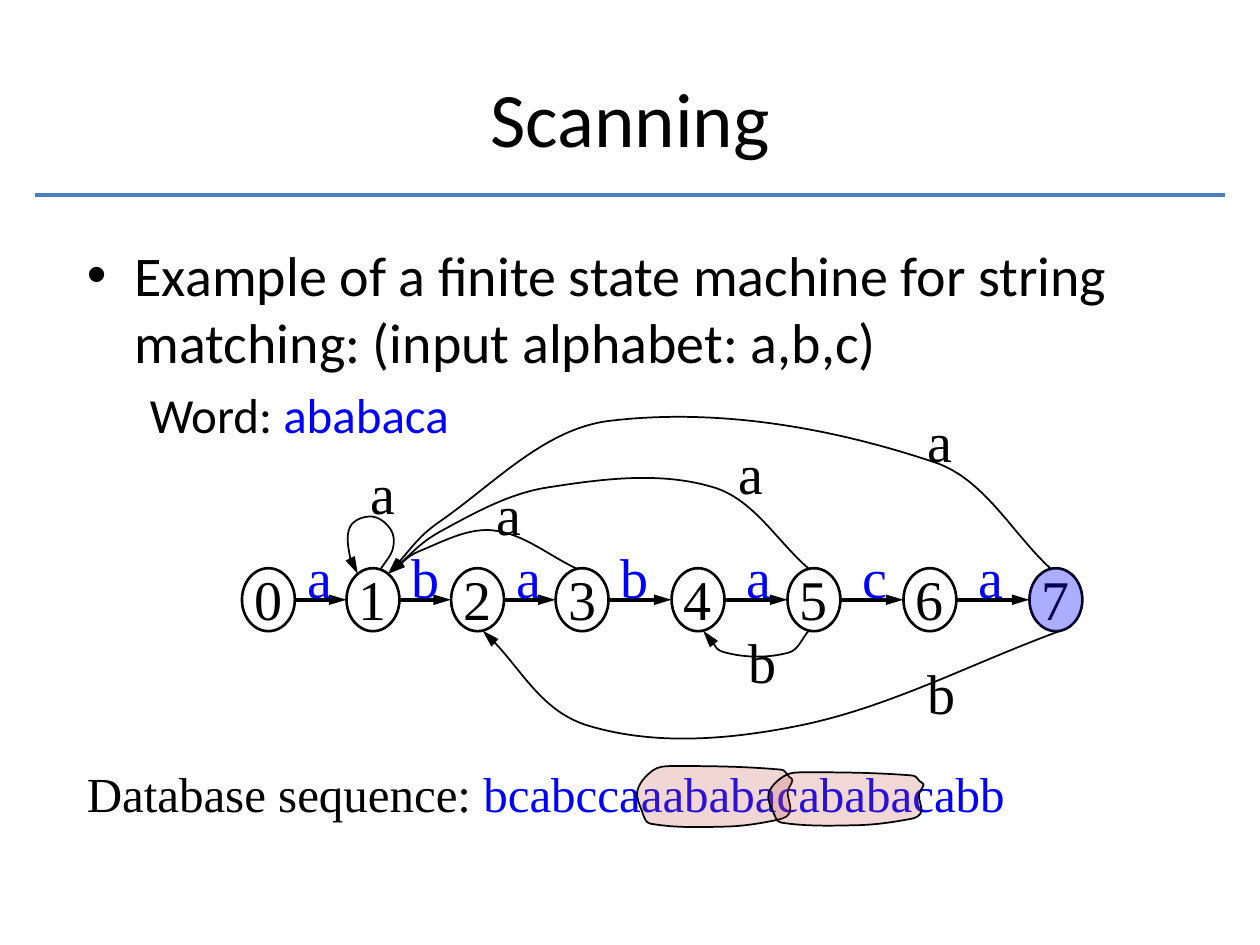
"""Build the slide on scanning a sequence with a finite state machine."""
from collections import namedtuple
from itertools import accumulate
from math import dist, sqrt

from lxml.etree import SubElement
from pptx import Presentation
from pptx.dml.color import RGBColor
from pptx.enum.shapes import MSO_CONNECTOR as Connector, MSO_SHAPE as Shape
from pptx.enum.text import MSO_ANCHOR as Anchor, MSO_AUTO_SIZE as AutoSize, PP_ALIGN as Align
from pptx.oxml.ns import qn
from pptx.util import Inches, Pt

Step = namedtuple("Step", "letter pitch lead")
Fallback = namedtuple("Fallback", "letter source leave target arrive side label bends")
Match = namedtuple("Match", "left top width height opacity")

BLACK, BLUE, RED, RULE = "000000", "0000FF", "C0504D", "4B7EBC"
SANS, SERIF = "Calibri", "Times New Roman"
HANGING = (0.38, -0.38)

TITLE = "Scanning"
TASK = "Example of a finite state machine for string matching: (input alphabet: a,b,c)"
WORD = ("Word: ", "ababaca")
SEQUENCE = ("Database sequence: ", "bcabccaaababacababacabb")

FIRST_LEFT, STATE_TOP, STATE_WIDTH, STATE_HEIGHT = 1.92, 4.51, 0.42, 0.5
STATE_MIDDLE = STATE_TOP + STATE_HEIGHT / 2
NUMBER_TOP, NUMBER_WIDTH, STEP_LABEL_TOP = 4.43, 0.41, 4.26
LABEL_HEIGHT, LABEL_WIDTHS = 0.64, {"a": 0.38, "b": 0.45, "c": 0.39}
ABOVE, BELOW = -1, 1

STEPS = [
    Step("a", 0.83, 0), Step("b", 0.83, 0), Step("a", 0.83, 0), Step("b", 0.92, 0),
    Step("a", 0.92, 0.08), Step("c", 0.92, 0.08), Step("a", 1, 0.08),
]
STATE_LEFTS = list(accumulate((step.pitch for step in STEPS), initial=FIRST_LEFT))

FALLBACKS = [
    Fallback("a", 1, 0.27, 1, 0.09, ABOVE, (2.84, 3.59),
             [(3.12, 4.35), (3.1, 4.2), (2.95, 4.1), (2.78, 4.18), (2.78, 4.43)]),
    Fallback("a", 3, 0.17, 1, 0.33, ABOVE, (3.84, 3.76), [(3.92, 4.21), (3.34, 4.37)]),
    Fallback("a", 5, 0.17, 1, 0.33, ABOVE, (5.76, 3.43),
             [(5.67, 3.87), (4.34, 3.87), (3.51, 4.21)]),
    Fallback("a", 7, 0.17, 1, 0.33, ABOVE, (7.26, 3.18),
             [(7.42, 3.67), (4.84, 3.34), (3.49, 4.14)]),
    Fallback("b", 5, 0.17, 4, 0.25, BELOW, (5.84, 4.93), [(6.26, 5.18), (5.76, 5.18)]),
    Fallback("b", 7, 0.25, 2, 0.25, BELOW, (7.26, 5.18), [(6.34, 5.76), (4.67, 5.76)]),
]

MATCHES = [Match(5.06, 6.08, 1.23, 0.48, 23), Match(6.1, 6.13, 1.23, 0.42, 22)]
MARKER_OUTLINE = [
    (0.03, 0.75), (0, 0.4), (0.1, 0.07), (0.21, 0), (0.93, 0.06), (0.98, 0.18), (1, 0.23),
    (0.97, 0.42), (0.98, 0.78), (0.88, 0.9), (0.57, 1), (0.08, 0.95),
]


def paint(color_format, color):
    color_format.rgb = RGBColor.from_string(color)


def set_line(line, color, width, arrow=False):
    line.width = Pt(width)
    line.fill.solid()
    paint(line.color, color)
    if arrow:
        SubElement(line._get_or_add_ln(), qn("a:tailEnd"), type="triangle", w="med", len="lg")


def set_fill(shape, color=None, opacity=100):
    shape.shadow.inherit = False
    if color is None:
        shape.fill.background()
        return
    shape.fill.solid()
    paint(shape.fill.fore_color, color)
    tint = shape.fill._xPr.find(".//" + qn("a:srgbClr"))
    SubElement(tint, qn("a:alpha"), val=str(opacity * 1000))


def add_box(slide, left, top, width, height, wrap=True, grow=True):
    frame = slide.shapes.add_textbox(*map(Inches, (left, top, width, height))).text_frame
    frame.word_wrap = wrap
    frame.auto_size = AutoSize.SHAPE_TO_FIT_TEXT if grow else AutoSize.NONE
    return frame


def write(paragraph, pieces, size, font):
    for text, color in pieces:
        run = paragraph.add_run()
        run.text = text
        run.font.size, run.font.name = Pt(size), font
        paint(run.font.color, color)


def indent(paragraph, margin, first, bullet=None):
    properties = paragraph._p.get_or_add_pPr()
    properties.set("marL", str(Inches(margin)))
    properties.set("indent", str(Inches(first)))
    SubElement(SubElement(properties, qn("a:spcBef")), qn("a:spcPct"), val="20000")
    if bullet:
        SubElement(properties, qn("a:buFont"), typeface="Arial")
        SubElement(properties, qn("a:buChar"), char=bullet)


def add_label(slide, text, left, top, width, color=BLACK):
    paragraph = add_box(slide, left, top, width, LABEL_HEIGHT, wrap=False).paragraphs[0]
    indent(paragraph, *HANGING)
    write(paragraph, [(text, color)], 32, SERIF)


def add_line(slide, start, end, color, width, arrow=False):
    line = slide.shapes.add_connector(Connector.STRAIGHT, *map(Inches, start + end))
    set_line(line.line, color, width, arrow)
    SubElement(line._element.spPr, qn("a:effectLst"))


def add_state(slide, left):
    return slide.shapes.add_shape(
        Shape.OVAL, *map(Inches, (left, STATE_TOP, STATE_WIDTH, STATE_HEIGHT)))


def rim_point(state, shift, side):
    across = 2 * shift / STATE_WIDTH - 1
    rise = STATE_HEIGHT / 2 * sqrt(1 - across ** 2)
    return STATE_LEFTS[state] + shift, STATE_MIDDLE + side * rise


def handle(knot, before, after, reach):
    scale = reach / 3 / dist(before, after)
    return tuple(k + (a - b) * scale for k, b, a in zip(knot, before, after))


def smooth_points(knots, closed):
    first, last = (knots[-1], knots[1]) if closed else (knots[0], knots[-1])
    ring = [first, *knots, *([knots[0]] if closed else []), last]
    for before, start, end, after in zip(ring, ring[1:], ring[2:], ring[3:]):
        reach = dist(start, end)
        yield from (handle(start, before, end, reach), handle(end, after, start, reach), end)


def add_curve(slide, knots, closed=False):
    points = [tuple(map(Inches, point)) for point in smooth_points(knots, closed)]
    builder = slide.shapes.build_freeform(*map(Inches, knots[0]))
    builder.add_line_segments(points, close=closed)
    curve = builder.convert_to_shape()
    segments = list(curve._element.iter(qn("a:lnTo")))
    for triple in zip(*[iter(segments)] * 3):
        bezier = triple[0].makeelement(qn("a:cubicBezTo"))
        triple[0].addprevious(bezier)
        for segment in triple:
            bezier.append(segment[0])
            segment.getparent().remove(segment)
    return curve


def add_heading(slide):
    frame = add_box(slide, 0.5, 0.3, 9, 1.25, grow=False)
    frame.vertical_anchor = Anchor.MIDDLE
    frame.paragraphs[0].alignment = Align.CENTER
    write(frame.paragraphs[0], [(TITLE, BLACK)], 44, SANS)
    add_line(slide, (0.28, 1.55), (9.72, 1.55), RULE, 2.25)


def add_body(slide):
    frame = add_box(slide, 0.59, 1.86, 8.75, 4.9, grow=False)
    indent(frame.paragraphs[0], *HANGING, bullet="•")
    write(frame.paragraphs[0], [(TASK, BLACK)], 32, SANS)
    word = frame.add_paragraph()
    word.level = 1
    indent(word, 0.81, -0.31)
    write(word, zip(WORD, (BLACK, BLUE)), 28, SANS)


def add_fallbacks(slide):
    for letter, source, leave, target, arrive, side, label, bends in FALLBACKS:
        add_label(slide, letter, *label, LABEL_WIDTHS[letter])
        curve = add_curve(slide, [
            rim_point(source, leave, side), *bends, rim_point(target, arrive, side)])
        set_fill(curve)
        set_line(curve.line, BLACK, 1, arrow=True)


def add_states(slide):
    for number, left in enumerate(STATE_LEFTS):
        state = add_state(slide, left)
        set_fill(state)
        set_line(state.line, BLACK, 1.5)
        add_label(slide, str(number), left, NUMBER_TOP, NUMBER_WIDTH)
    accepting = add_state(slide, STATE_LEFTS[-1])
    set_fill(accepting, BLUE, 32)
    accepting.line.fill.background()


def add_steps(slide):
    for step, left in zip(STEPS, STATE_LEFTS):
        start, end = left + STATE_WIDTH, left + step.pitch
        add_line(slide, (start, STATE_MIDDLE), (end, STATE_MIDDLE), BLACK, 2, arrow=True)
        add_label(slide, step.letter, start + step.lead, STEP_LABEL_TOP,
                  LABEL_WIDTHS[step.letter], BLUE)


def add_sequence(slide):
    paragraph = add_box(slide, 0.59, 6.01, 8.25, 0.56).paragraphs[0]
    indent(paragraph, *HANGING)
    write(paragraph, zip(SEQUENCE, (BLACK, BLUE)), 28, SERIF)
    for left, top, width, height, opacity in MATCHES:
        marker = add_curve(
            slide, [(left + x * width, top + y * height) for x, y in MARKER_OUTLINE], closed=True)
        set_fill(marker, RED, opacity)
        set_line(marker.line, BLACK, 1)


def main():
    deck = Presentation()
    deck.slide_width, deck.slide_height = Inches(10), Inches(7.5)
    slide = deck.slides.add_slide(deck.slide_layouts[6])
    for add_part in (add_heading, add_body, add_fallbacks, add_states, add_steps, add_sequence):
        add_part(slide)
    deck.save("out.pptx")


if __name__ == "__main__":
    main()
